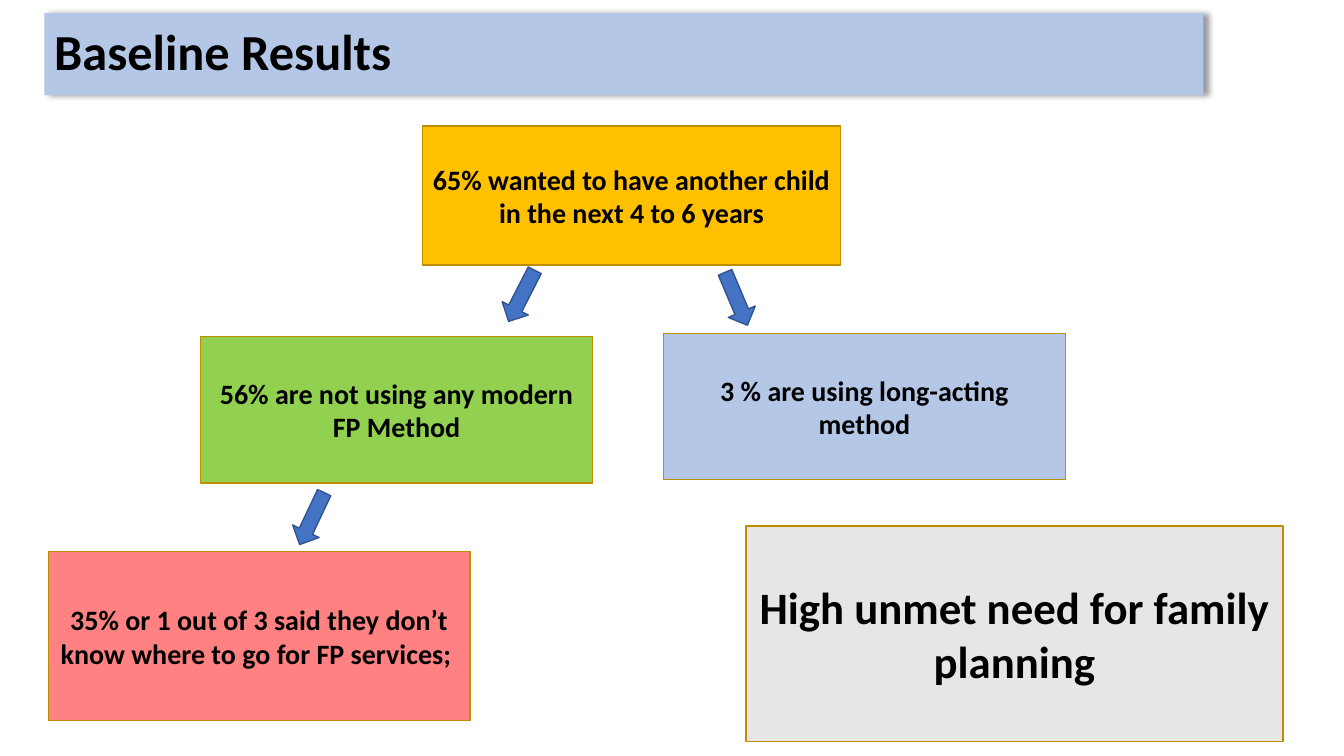
"""Build the Baseline Results slide: a small tree of survey findings."""
from lxml import etree
from pptx import Presentation
from pptx import util as u
from pptx.dml.color import RGBColor
from pptx.enum import shapes, text
from pptx.oxml.ns import qn

COLORS = {
    "black": "000000", "pale_blue": "B4C7E7", "green": "92D050",
    "amber": "FFC000", "grey": "E7E6E6", "coral": "FF8181",
    "gold": "BD8E00", "blue": "4472C4", "dark_blue": "325491",
}


def add_block(kind, box, fill, line=None, rotation=0):
    sp = s.shapes.add_shape(kind, *[u.Pt(v) for v in box])
    sp.shadow.inherit = False
    sp.rotation = rotation
    sp.fill.solid()
    sp.fill.fore_color.rgb = RGBColor.from_string(COLORS[fill])
    if line:
        sp.line.color.rgb = RGBColor.from_string(COLORS[line])
        sp.line.width = u.Pt(1)
    else:
        sp.line.fill.background()
    return sp


def set_text(sp, words, size=20, align=text.PP_ALIGN.CENTER, spacing=1.0):
    tf = sp.text_frame
    tf.word_wrap = True
    tf.vertical_anchor = text.MSO_ANCHOR.MIDDLE
    p = tf.paragraphs[0]
    p.alignment = align
    p.line_spacing = spacing
    r = p.add_run()
    r.text = words
    r.font.name = "Calibri"
    r.font.size = u.Pt(size)
    r.font.bold = True
    r.font.color.rgb = RGBColor.from_string(COLORS["black"])


prs = Presentation()
prs.slide_width, prs.slide_height = u.Pt(960), u.Pt(540)
s = prs.slides.add_slide(prs.slide_layouts[6])
RECT = shapes.MSO_SHAPE.RECTANGLE

title = add_block(RECT, (31.7, 9.4, 828, 58.5), "pale_blue")
set_text(title, "Baseline Results", size=36, align=text.PP_ALIGN.LEFT, spacing=0.9)
effects = title._element.spPr.find(qn("a:effectLst"))
shadow = etree.SubElement(effects, qn("a:outerShdw"), blurRad=str(u.Pt(4)),
                          dist=str(u.Pt(3)), dir="0", algn="l", rotWithShape="0")
shade = etree.SubElement(shadow, qn("a:srgbClr"), val=COLORS["black"])
etree.SubElement(shade, qn("a:alpha"), val="40000")

findings = [
    ("56% are not using any modern FP Method", (143.3, 240.5, 280, 104.4), "green", 20),
    ("65% wanted to have another child in the next 4 to 6 years", (301.7, 90, 298.8, 99.4), "amber", 20),
    ("3 % are using long-acting method", (473.8, 238.3, 287.3, 104.4), "pale_blue", 20),
    ("High unmet need for family planning", (532.8, 375.8, 383.8, 154.1), "grey", 32),
    ("35% or 1 out of 3 said they don’t know where to go for FP services; ",
     (34.6, 393.8, 301, 121), "coral", 20),
]
for words, box, fill, size in findings:
    set_text(add_block(RECT, box, fill, "gold"), words, size=size)

for left, top, rotation in [(352.1, 200.9, 117.1), (505.4, 203, 67.1), (202.3, 360, 115.3)]:
    add_block(shapes.MSO_SHAPE.RIGHT_ARROW, (left, top, 41, 20.9), "blue", "dark_blue", rotation)

prs.save("out.pptx")
